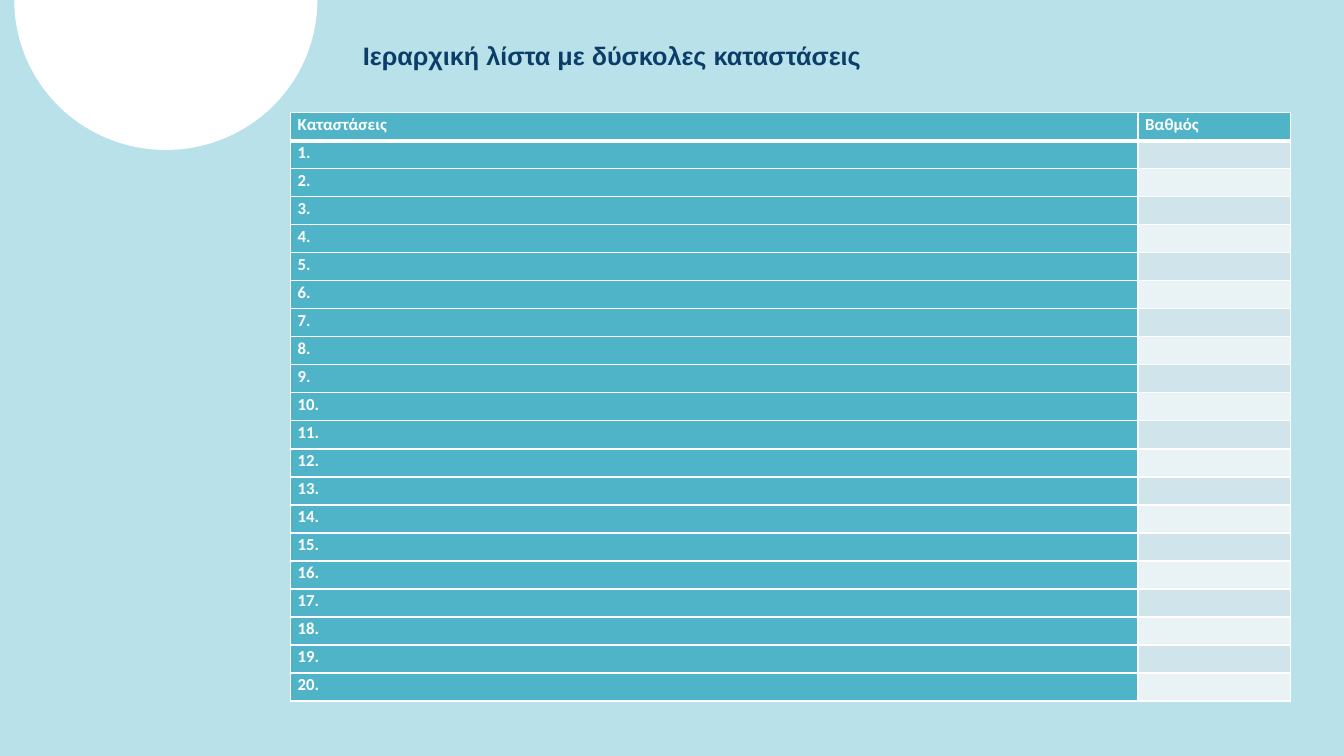
import math
from dataclasses import dataclass

from lxml import etree
from pptx import Presentation
from pptx.dml.color import RGBColor
from pptx.enum import text
from pptx.oxml import ns
from pptx.util import Cm, Pt

TITLE = "Ιεραρχική λίστα με δύσκολες καταστάσεις"
HEADERS = ("Καταστάσεις", "Βαθμός")
SITUATIONS = 20
ROWS = [HEADERS] + [(f"{n}.", "") for n in range(1, SITUATIONS + 1)]


@dataclass(frozen=True)
class Theme:
    background: str = "B9E1E9"
    white: str = "FFFFFF"
    navy: str = "0B3D69"
    teal: str = "50B4C8"
    bands: tuple = ("D0E5EB", "E9F2F5")
    title_font: str = "Arial"
    table_font: str = "Calibri"
    title_size: int = 18
    table_size: int = 12
    line_spacing: float = 1.07


THEME = Theme()
SLIDE_SIZE = (33.87, 19.05)
TITLE_BOX = (8.89, 0.86, 14.86, 1.04)
TABLE_LEFT, TABLE_TOP, TABLE_HEIGHT = 7.32, 2.84, 14.83
COLUMNS = (21.36, 3.84)
DISC_CENTRE, DISC_WIDTH, DISC_DEPTH = 4.18, 7.64, 3.78


def paint(fill, color):
    fill.solid()
    fill.fore_color.rgb = RGBColor.from_string(color)


def write(tf, content, *, font, size, color, bold=True):
    p = tf.paragraphs[0]
    p.alignment = text.PP_ALIGN.LEFT
    p.line_spacing = THEME.line_spacing
    p.space_before = Pt(0)
    if not content:
        # An empty cell takes its line height from the end-of-paragraph size.
        end = etree.SubElement(p._p, ns.qn("a:endParaRPr"))
        end.set("sz", str(size * 100))
        return
    r = p.add_run()
    r.text = content
    r.font.name, r.font.size, r.font.bold = font, Pt(size), bold
    r.font.color.rgb = RGBColor.from_string(color)


def set_borders(cell, **widths):
    """Draw white cell borders; L, R, T and B give widths in points."""
    tc_pr = cell._tc.get_or_add_tcPr()
    for side in "LRTB":
        ln = etree.SubElement(tc_pr, ns.qn(f"a:ln{side}"), w=str(Pt(widths.get(side, 1))))
        fill = etree.SubElement(ln, ns.qn("a:solidFill"))
        etree.SubElement(fill, ns.qn("a:srgbClr"), val=THEME.white)


def add_half_disc(s):
    steps = 120
    arc = [(Cm(DISC_CENTRE + DISC_WIDTH / 2 * math.cos(math.pi * i / steps)),
            Cm(DISC_DEPTH * math.sin(math.pi * i / steps))) for i in range(steps + 1)]
    builder = s.shapes.build_freeform(*arc[0])
    builder.add_line_segments(arc[1:], close=True)
    sp = builder.convert_to_shape()
    sp.shadow.inherit = False
    paint(sp.fill, THEME.white)
    sp.line.fill.background()


def add_title(s):
    sp = s.shapes.title
    sp.left, sp.top, sp.width, sp.height = map(Cm, TITLE_BOX)
    tf = sp.text_frame
    tf.word_wrap = True
    tf.auto_size = text.MSO_AUTO_SIZE.SHAPE_TO_FIT_TEXT
    tf.vertical_anchor = text.MSO_ANCHOR.MIDDLE
    write(tf, TITLE, font=THEME.title_font, size=THEME.title_size, color=THEME.navy)


def cell_color(row, column):
    return THEME.teal if row == 0 or column == 0 else THEME.bands[(row - 1) % 2]


def add_situations_table(s):
    table = s.shapes.add_table(len(ROWS), len(COLUMNS), Cm(TABLE_LEFT), Cm(TABLE_TOP),
                               Cm(sum(COLUMNS)), Cm(TABLE_HEIGHT)).table
    for column, width in zip(table.columns, COLUMNS):
        column.width = Cm(width)
    for i, row in enumerate(ROWS):
        table.rows[i].height = Cm(TABLE_HEIGHT / len(ROWS))
        for j, content in enumerate(row):
            cell = table.cell(i, j)
            cell.margin_left = cell.margin_right = Cm(0.18)
            cell.margin_top = cell.margin_bottom = 0
            set_borders(cell, T=3 if i == 1 else 1, B=3 if i == 0 else 1)
            paint(cell.fill, cell_color(i, j))
            write(cell.text_frame, content, font=THEME.table_font,
                  size=THEME.table_size, color=THEME.white)


def main():
    prs = Presentation()
    prs.slide_width, prs.slide_height = map(Cm, SLIDE_SIZE)
    s = prs.slides.add_slide(prs.slide_layouts[5])
    paint(s.background.fill, THEME.background)
    add_half_disc(s)
    add_situations_table(s)
    add_title(s)
    prs.save("out.pptx")


if __name__ == "__main__":
    main()
